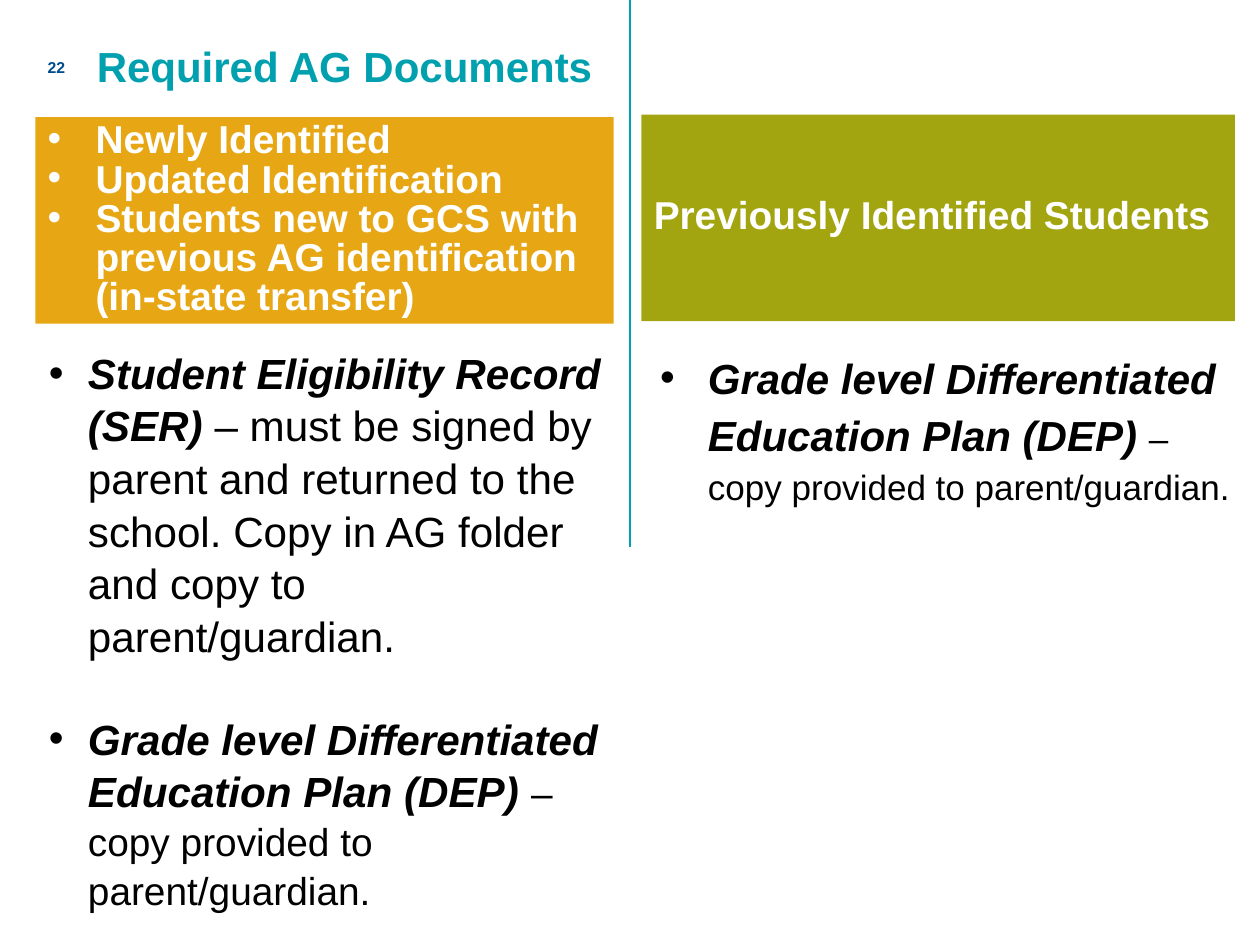
import pptx
import pptx.util
import pptx.dml.color
import pptx.enum.shapes
import pptx.enum.text
from lxml import etree

Inches, Pt = pptx.util.Inches, pptx.util.Pt
MID = pptx.enum.text.MSO_ANCHOR.MIDDLE
TOP = pptx.enum.text.MSO_ANCHOR.TOP

THEME = {
    "font": "Arial",
    "teal": "00A0AF", "navy": "004B8D", "gold": "E7A614",
    "olive": "A3A510", "ink": "000000", "white": "FFFFFF",
    "title": 24, "page": 9, "head": 22.2,
    "left": 24.1, "note": 22.2, "right": 24, "small": 20,
}

PLAN = "Grade level Differentiated Education Plan (DEP) "
COPY = "–copy provided to parent/guardian."
RULE = (5, 0, 5, 4.34)

BOXES = [
    {"at": (0.67, 0.23, 8.1, 0.6), "anchor": MID, "line": Pt(28),
     "paras": [[("Required AG Documents", "title", "teal", "b")]]},
    {"at": (0.29, 2.69, 4.57, 4.54), "anchor": TOP, "line": 1.04,
     "indent": 0.31, "gap": 28.8,
     "paras": [
         [("Student Eligibility Record (SER) ", "left", "ink", "bi"),
          ("– must be signed by parent and returned to the school. "
           "Copy in AG folder and copy to parent/guardian.",
           "left", "ink", "")],
         [(PLAN, "left", "ink", "bi"), (COPY, "note", "ink", "")]]},
    {"at": (5.14, 2.69, 4.71, 3.82), "anchor": TOP, "line": 1.14,
     "indent": 0.38,
     "paras": [[(PLAN, "right", "ink", "bi"), (COPY, "small", "ink", "")]]},
    {"at": (0.28, 0.33, 2.33, 0.4), "anchor": MID,
     "paras": [[("22", "page", "navy", "b")]]},
    {"at": (0.28, 0.93, 4.59, 1.64), "anchor": MID, "line": 0.84,
     "indent": 0.38, "fill": "gold",
     "paras": [[(text, "head", "white", "b")] for text in (
         "Newly Identified",
         "Updated Identification",
         "Students new to GCS with previous AG identification "
         "(in-state transfer)")]},
    {"at": (5.09, 0.91, 4.71, 1.64), "anchor": MID, "line": 0.84,
     "fill": "olive",
     "paras": [[("Previously Identified Students", "head", "white", "b")]]},
]


def tint(name):
    return pptx.dml.color.RGBColor.from_string(THEME[name])


def add_rule(slide):
    kind = pptx.enum.shapes.MSO_CONNECTOR.STRAIGHT
    rule = slide.shapes.add_connector(kind, *map(Inches, RULE))
    rule.line.color.rgb = tint("teal")
    rule.line.width = Pt(1)
    etree.SubElement(rule._element.spPr, pptx.oxml.ns.qn("a:effectLst"))


def add_dot(para, indent):
    props = para._p.get_or_add_pPr()
    props.set("marL", str(Inches(indent)))
    props.set("indent", str(-Inches(indent)))
    font = etree.SubElement(props, pptx.oxml.ns.qn("a:buFont"))
    font.set("typeface", THEME["font"])
    etree.SubElement(props, pptx.oxml.ns.qn("a:buChar")).set("char", "•")


def add_run(para, text, size, color, style):
    run = para.add_run()
    run.text = text
    font = run.font
    font.name = THEME["font"]
    font.size = Pt(THEME[size])
    font.color.rgb = tint(color)
    font.bold = "b" in style
    font.italic = "i" in style


def add_box(slide, box):
    place = [Inches(n) for n in box["at"]]
    if "fill" in box:
        kind = pptx.enum.shapes.MSO_SHAPE.RECTANGLE
        shape = slide.shapes.add_shape(kind, *place)
        shape.shadow.inherit = False
        shape.fill.solid()
        shape.fill.fore_color.rgb = tint(box["fill"])
        shape.line.fill.background()
    else:
        shape = slide.shapes.add_textbox(*place)
    frame = shape.text_frame
    frame.word_wrap = True
    frame.vertical_anchor = box["anchor"]
    frame.margin_right = Inches(0.05)
    for i, runs in enumerate(box["paras"]):
        para = frame.add_paragraph() if i else frame.paragraphs[0]
        if "indent" in box:
            add_dot(para, box["indent"])
        para.alignment = pptx.enum.text.PP_ALIGN.LEFT
        para.line_spacing = box.get("line", 1.0)
        para.space_before = Pt(box.get("gap", 0) if i else 0)
        for run in runs:
            add_run(para, *run)


def main():
    deck = pptx.Presentation()
    deck.slide_width, deck.slide_height = Inches(10), Inches(7.5)
    slide = deck.slides.add_slide(deck.slide_layouts[6])
    add_rule(slide)
    for box in BOXES:
        add_box(slide, box)
    deck.save("out.pptx")


if __name__ == "__main__":
    main()
